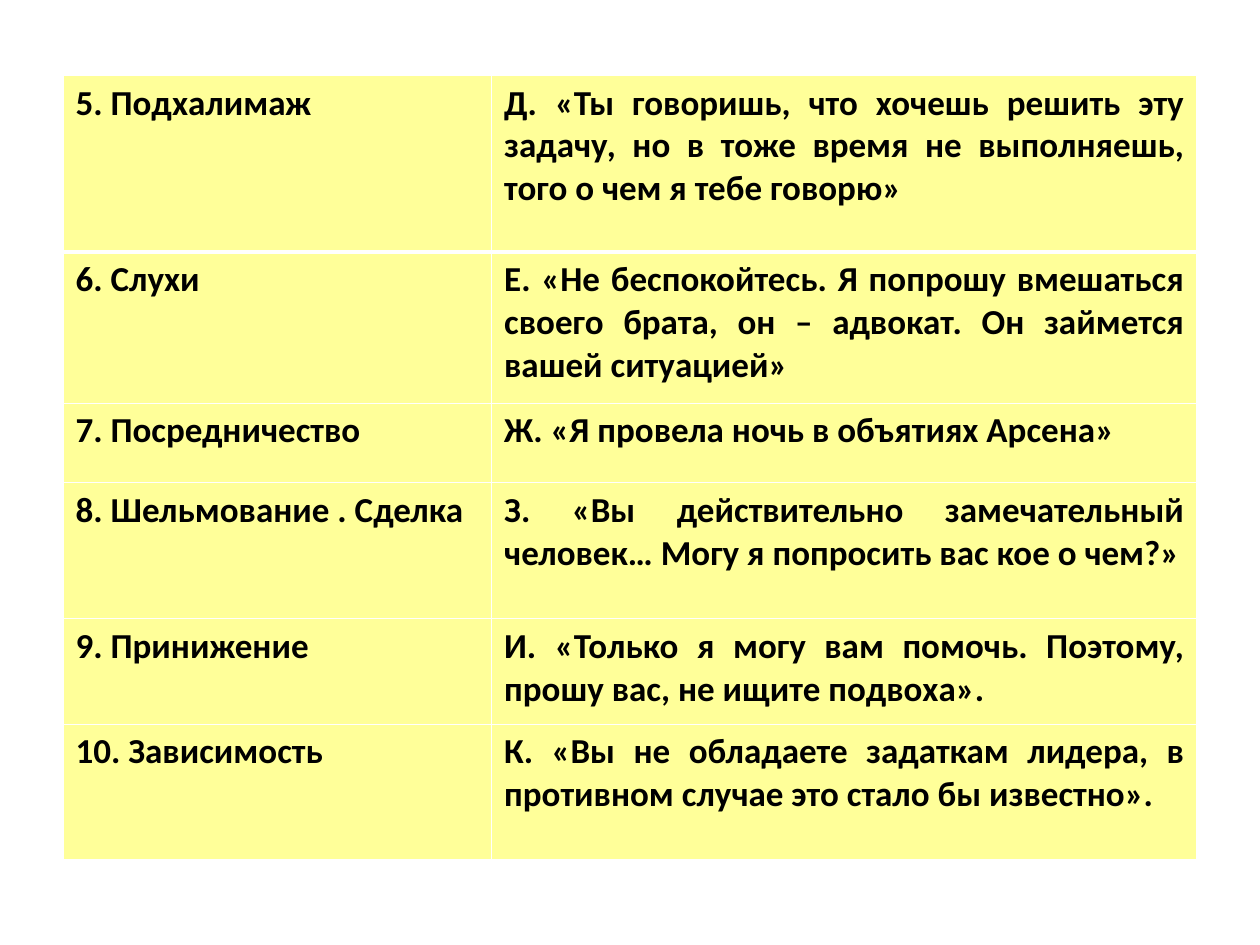
from lxml import etree
from pptx import Presentation
from pptx.dml.color import RGBColor
from pptx.enum.text import PP_ALIGN
from pptx.oxml.ns import qn
from pptx.util import Cm, Pt

JUSTIFY = PP_ALIGN.JUSTIFY
BLANK_LAYOUT = 6
CELL_FILL = "FFFF99"
BORDER_COLOR = "FFFFFF"
THIN, THICK = 1, 3
COLUMN_WIDTHS = (8.64, 14.22)

ROWS = [
    (3.56, "5. Подхалимаж",
     "Д. «Ты говоришь, что хочешь решить эту задачу, но в тоже время не выполняешь, того о чем я тебе говорю»"),
    (3.05, "6. Слухи",
     "Е. «Не беспокойтесь. Я попрошу вмешаться своего брата, он – адвокат. Он займется вашей ситуацией»"),
    (1.6, "7. Посредничество",
     "Ж. «Я провела ночь в объятиях Арсена»"),
    (2.74, "8. Шельмование . Сделка",
     "З. «Вы действительно замечательный человек… Могу я попросить вас кое о чем?»"),
    (2.13, "9. Принижение",
     "И. «Только я могу вам помочь. Поэтому, прошу вас, не ищите подвоха»."),
    (2.74, "10. Зависимость",
     "К. «Вы не обладаете задаткам лидера, в противном случае это стало бы известно»."),
]


def color(value):
    return RGBColor.from_string(value)


def set_borders(cell, widths):
    properties = cell._tc.get_or_add_tcPr()
    for side, width in widths.items():
        line = etree.SubElement(properties, qn(f"a:ln{side}"), w=str(Pt(width)))
        fill = etree.SubElement(line, qn("a:solidFill"))
        etree.SubElement(fill, qn("a:srgbClr"), val=BORDER_COLOR)


def format_cell(cell, text, row_index):
    set_borders(cell, {
        "L": THIN,
        "R": THIN,
        "T": THICK if row_index == 1 else THIN,
        "B": THICK if row_index == 0 else THIN,
    })
    cell.fill.solid()
    cell.fill.fore_color.rgb = color(CELL_FILL)
    paragraph = cell.text_frame.paragraphs[0]
    paragraph.alignment = JUSTIFY
    run = paragraph.add_run()
    run.text = text
    for name, value in {"name": "Calibri", "size": Pt(20), "bold": True}.items():
        setattr(run.font, name, value)
    run.font.color.rgb = color("000000")


def add_phrase_table(slide, left, top):
    width = sum(COLUMN_WIDTHS)
    height = sum(row[0] for row in ROWS)
    table = slide.shapes.add_table(
        len(ROWS), len(COLUMN_WIDTHS), Cm(left), Cm(top), Cm(width), Cm(height)
    ).table
    table.horz_banding = False
    for column, column_width in zip(table.columns, COLUMN_WIDTHS):
        column.width = Cm(column_width)
    for row_index, (row_height, *texts) in enumerate(ROWS):
        table.rows[row_index].height = Cm(row_height)
        for column_index, text in enumerate(texts):
            format_cell(table.cell(row_index, column_index), text, row_index)


def main():
    presentation = Presentation()
    presentation.slide_width = Cm(25.4)
    presentation.slide_height = Cm(19.05)
    slide = presentation.slides.add_slide(presentation.slide_layouts[BLANK_LAYOUT])
    add_phrase_table(slide, 1.27, 1.52)
    presentation.save("out.pptx")


if __name__ == "__main__":
    main()
